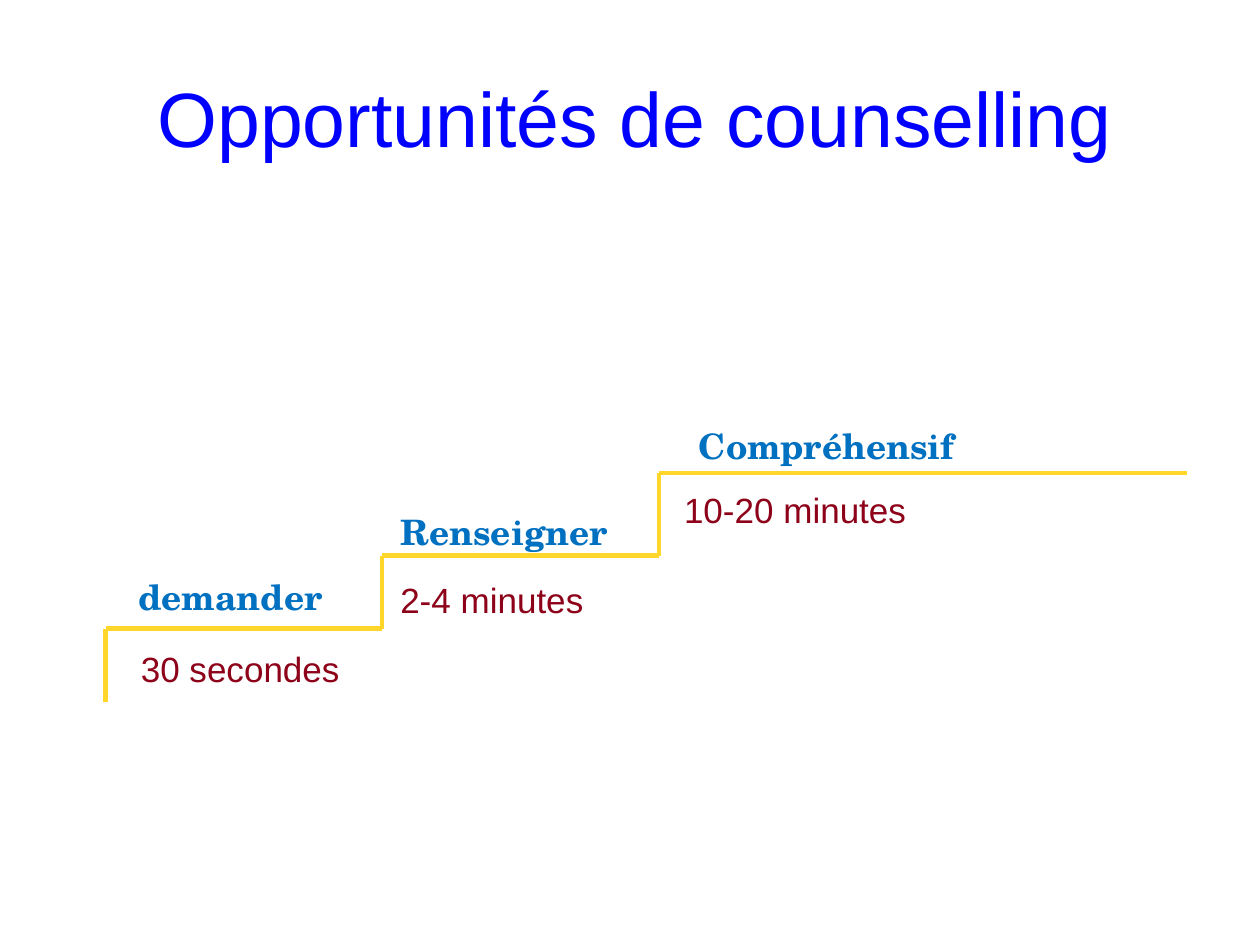
from itertools import pairwise

from lxml import etree
from pptx import Presentation
from pptx.dml.color import RGBColor
from pptx.enum.shapes import MSO_CONNECTOR
from pptx.enum.text import MSO_ANCHOR, PP_ALIGN
from pptx.oxml.ns import qn
from pptx.util import Cm, Pt

STRAIGHT = MSO_CONNECTOR.STRAIGHT
MIDDLE, TOP = MSO_ANCHOR.MIDDLE, MSO_ANCHOR.TOP
CENTER, LEFT = PP_ALIGN.CENTER, PP_ALIGN.LEFT

# Content: lengths in cm
TITLE = "Opportunités de counselling"
STEPS = [  # riser x, tread y, (label, left, top, width), (duration, left, top, width)
    (2.13, 12.67, ("demander", 2.54, 11.48, 4.78), ("30 secondes", 2.59, 12.93, 5.08)),
    (7.7, 11.2, ("Renseigner", 7.82, 10.16, 5.92), ("2-4 minutes", 7.82, 11.53, 5.08)),
    (13.28, 9.53, ("Compréhensif", 13.84, 8.43, 12.5), ("10-20 minutes", 13.54, 9.73, 9.55)),
]
STAIR_FOOT, STAIR_END = 14.15, 23.93
TEXT_HEIGHT = 1.12
YELLOW, BLUE, RED, TITLE_BLUE = "FFD629", "0070C0", "8D0219", "0000FF"


def color(value):
    return RGBColor.from_string(value)


def add_line(page, start, end):
    line = page.shapes.add_connector(STRAIGHT, *map(Cm, start + end))
    line.line.color.rgb = color(YELLOW)
    line.line.width = Pt(2.5)
    etree.SubElement(line._element.spPr, qn("a:effectLst"))


def add_text(page, text, left, top, width, height, font, size, fill,
             bold=False, align=LEFT, anchor=TOP):
    box = page.shapes.add_textbox(Cm(left), Cm(top), Cm(width), Cm(height))
    frame = box.text_frame
    frame.text = text
    frame.word_wrap = True
    frame.vertical_anchor = anchor
    para = frame.paragraphs[0]
    para.alignment = align
    span = para.runs[0].font
    span.name, span.size, span.bold = font, Pt(size), bold
    span.color.rgb = color(fill)


deck = Presentation()
deck.slide_width, deck.slide_height = Cm(25.4), Cm(19.05)
page = deck.slides.add_slide(deck.slide_layouts[6])

# Staircase: a riser and a tread for each step
corners = [(STEPS[0][0], STAIR_FOOT)]
tread_ends = [step[0] for step in STEPS[1:]] + [STAIR_END]
for (riser, tread, *_), tread_end in zip(STEPS, tread_ends):
    corners += [(riser, tread), (tread_end, tread)]
for start, end in pairwise(corners):
    add_line(page, start, end)

# Step labels above the treads, durations below
for _, _, label, duration in STEPS:
    add_text(page, *label, TEXT_HEIGHT, "TeX Gyre Schola", 20, BLUE, bold=True)
    add_text(page, *duration, TEXT_HEIGHT, "Arial", 20, RED)

# Title
add_text(page, TITLE, 0.64, 0.76, 24.33, 3.18, "Arial", 44, TITLE_BLUE,
         align=CENTER, anchor=MIDDLE)

deck.save("out.pptx")
